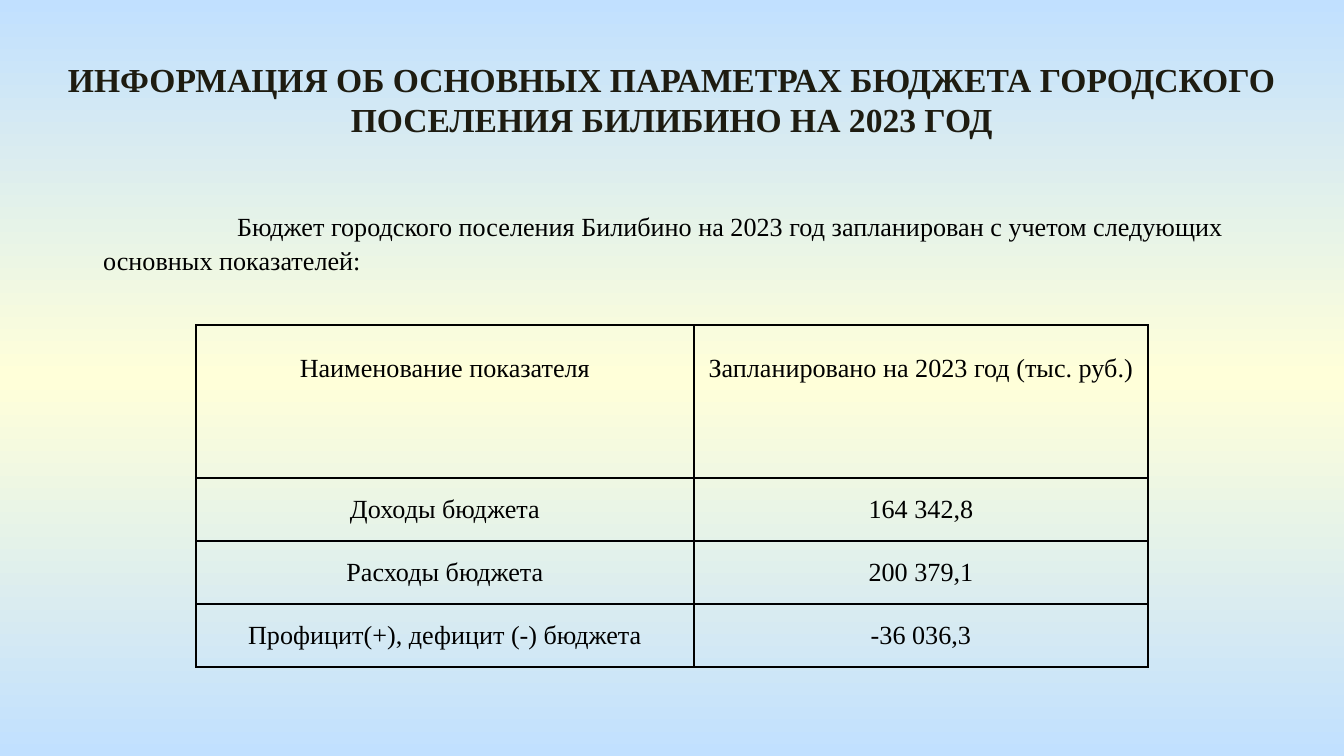
import copy

import pptx
import pptx.dml.color
import pptx.enum.shapes
import pptx.enum.text
import pptx.oxml
import pptx.oxml.ns
import pptx.util

# Content
TITLE = "ИНФОРМАЦИЯ ОБ ОСНОВНЫХ ПАРАМЕТРАХ БЮДЖЕТА ГОРОДСКОГО ПОСЕЛЕНИЯ БИЛИБИНО НА 2023 ГОД"
INTRO = ("Бюджет городского поселения Билибино на 2023 год запланирован "
         "с учетом следующих основных показателей:")
ROWS = [
    ("Наименование показателя", "Запланировано на 2023 год (тыс. руб.)"),
    ("Доходы бюджета", "164 342,8"),
    ("Расходы бюджета", "200 379,1"),
    ("Профицит(+), дефицит (-) бюджета", "-36 036,3"),
]

# Format
COLORS = {"sky": "C1E0FF", "cream": "FFFFD9", "title": "1E1C11", "black": "000000"}
FONT = "Times New Roman"
COL_WIDTHS = [498, 454]
ROW_HEIGHTS = [153, 63, 63, 63]
ALIGN = pptx.enum.text.PP_ALIGN
ANCHOR = pptx.enum.text.MSO_ANCHOR


def px(n):
    return pptx.util.Emu(round(n * 914400 / 134.4))


def rgb(name):
    return pptx.dml.color.RGBColor.from_string(COLORS[name])


def write(tf, text, size=14, color="black", bold=False, align=ALIGN.CENTER):
    tf.word_wrap = True
    p = tf.paragraphs[0]
    p.alignment = align
    r = p.add_run()
    r.text = text
    r.font.name = FONT
    r.font.size = pptx.util.Pt(size)
    r.font.bold = bold
    r.font.color.rgb = rgb(color)
    return p


def set_borders(cell):
    tc_pr = cell._tc.get_or_add_tcPr()
    for i, side in enumerate(("lnL", "lnR", "lnT", "lnB")):
        tc_pr.insert(i, pptx.oxml.parse_xml(
            f'<a:{side} {pptx.oxml.ns.nsdecls("a")} w="12700"><a:solidFill>'
            f'<a:srgbClr val="{COLORS["black"]}"/></a:solidFill></a:{side}>'))


prs = pptx.Presentation()
prs.slide_width, prs.slide_height = px(1344), px(756)
s = prs.slides.add_slide(prs.slide_layouts[6])

# Background: vertical gradient with a third stop
fill = s.background.fill
fill.gradient()
fill.gradient_angle = 270
stops = next(s.element.iter(pptx.oxml.ns.qn("a:gsLst")))
stops.append(copy.deepcopy(stops[-1]))
for stop, position, name in zip(fill.gradient_stops, (0, 0.5, 1), ("sky", "cream", "sky")):
    stop.position = position
    stop.color.rgb = rgb(name)

# Introduction: rectangle filled with the slide background, first line indented
sp = s.shapes.add_shape(pptx.enum.shapes.MSO_SHAPE.RECTANGLE,
                        px(90), px(196), px(1175), px(86))
sp.shadow.inherit = False
sp.line.fill.background()
sp.element.set("useBgFill", "1")
sp.element.remove(sp.element.find(pptx.oxml.ns.qn("p:style")))
tf = sp.text_frame
tf.vertical_anchor = ANCHOR.TOP
tf.margin_top = px(12)
p = write(tf, INTRO, align=ALIGN.LEFT)
p.line_spacing = 1.08
p._p.get_or_add_pPr().set("indent", str(px(134)))

# Title
title = s.shapes.add_textbox(px(47), px(52), px(1250), px(95))
write(title.text_frame, TITLE, size=18, color="title", bold=True)

# Table of indicators
table = s.shapes.add_table(len(ROWS), len(COL_WIDTHS), px(196), px(325),
                           px(sum(COL_WIDTHS)), px(sum(ROW_HEIGHTS))).table
table.first_row = table.horz_banding = False
for column, width in zip(table.columns, COL_WIDTHS):
    column.width = px(width)
for i, (row, height) in enumerate(zip(ROWS, ROW_HEIGHTS)):
    table.rows[i].height = px(height)
    for j, text in enumerate(row):
        cell = table.cell(i, j)
        cell.margin_left = cell.margin_right = px(9)
        cell.margin_top = px(0 if i else 29)
        cell.margin_bottom = 0
        cell.vertical_anchor = ANCHOR.MIDDLE if i else ANCHOR.TOP
        cell.fill.background()
        set_borders(cell)
        write(cell.text_frame, text)

prs.save("out.pptx")
